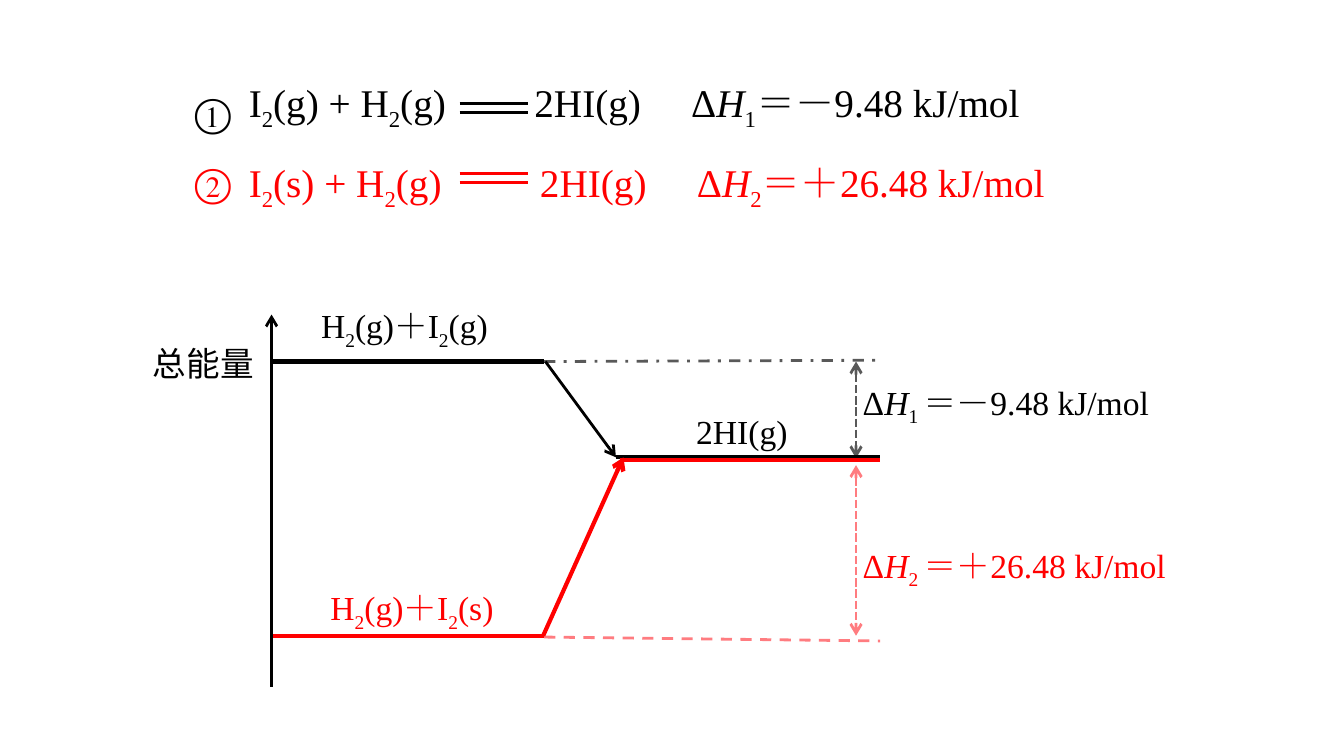
import pptx
import pptx.util
import pptx.dml.color
import pptx.enum.dml
import pptx.enum.shapes
import pptx.enum.text
import pptx.oxml.ns
from lxml import etree

Pt = pptx.util.Pt
RGB = pptx.dml.color.RGBColor
DASH = pptx.enum.dml.MSO_LINE
BLACK = RGB(0, 0, 0)
RED = RGB(0xFF, 0, 0)
GREY = RGB(0x59, 0x59, 0x59)
PINK = RGB(0xFF, 0x7C, 0x80)
SERIF = "Times New Roman"
SANS = "Noto Sans CJK SC"


def add_xml(parent, tag, **attributes):
    return etree.SubElement(parent, pptx.oxml.ns.qn(tag), attributes)


class EnergySlide:
    frame_format = {
        "word_wrap": True,
        "vertical_anchor": pptx.enum.text.MSO_ANCHOR.MIDDLE,
        "auto_size": pptx.enum.text.MSO_AUTO_SIZE.SHAPE_TO_FIT_TEXT,
    }

    def __init__(self, s):
        self.s = s

    def line(self, x1, y1, x2, y2, color, width=1.5, dash=None, head=False, tail=False):
        sp = self.s.shapes.add_connector(
            pptx.enum.shapes.MSO_CONNECTOR.STRAIGHT, Pt(x1), Pt(y1), Pt(x2), Pt(y2))
        sp.line.color.rgb = color
        sp.line.width = Pt(width)
        if dash:
            sp.line.dash_style = dash
        ln = sp.line._get_or_add_ln()
        for wanted, tag in ((head, "a:headEnd"), (tail, "a:tailEnd")):
            if wanted:
                add_xml(ln, tag, type="arrow")
        add_xml(sp._element.spPr, "a:effectLst")

    def runs(self, p, markup, color, size, font):
        for piece in markup.split("|"):
            r = p.add_run()
            r.text = piece.lstrip("_/")
            values = {"name": font, "size": Pt(size), "italic": piece.startswith("/")}
            for key, value in values.items():
                setattr(r.font, key, value)
            r.font.color.rgb = color
            add_xml(r.font._element, "a:ea", typeface=font)
            if piece.startswith("_"):
                r.font._element.set("baseline", "-25000")

    def text(self, x, y, w, h, rows, size=18, font=SERIF, spacing=None, inset=(5, 3), tabs=()):
        sp = self.s.shapes.add_textbox(Pt(x), Pt(y), Pt(w), Pt(h))
        tf = sp.text_frame
        side, edge = inset
        margins = {"margin_left": Pt(side), "margin_right": Pt(side),
                   "margin_top": Pt(edge), "margin_bottom": Pt(edge)}
        for key, value in {**self.frame_format, **margins}.items():
            setattr(tf, key, value)
        for i, (markup, color) in enumerate(rows):
            p = tf.paragraphs[0] if i == 0 else tf.add_paragraph()
            if spacing:
                p.line_spacing = spacing
            if tabs:
                stops = add_xml(p._p.get_or_add_pPr(), "a:tabLst")
                for stop in tabs[i]:
                    add_xml(stops, "a:tab", pos=str(Pt(stop)), algn="l")
            self.runs(p, markup, color, size, font)


def main():
    prs = pptx.Presentation()
    prs.slide_width, prs.slide_height = Pt(720), Pt(405)
    e = EnergySlide(prs.slides.add_slide(prs.slide_layouts[6]))

    axis, bend, gap_x, right = 145.5, 291.5, 458.6, 471.5
    gas, product, solid = 193.7, 245, 340.6

    e.text(97.2, 33.1, 35.3, 78.5, [("①", BLACK), ("②", RED)],
           size=21, spacing=1.5, inset=(7.2, 3.6))
    e.text(130.3, 31.7, 485.3, 77.8, [
        ("I|_2|(g) + H|_2|(g)\t2HI(g)\tΔ|/H|_1|＝－9.48 kJ/mol", BLACK),
        ("I|_2|(s) + H|_2|(g)\t2HI(g)\tΔ|/H|_2|＝＋26.48 kJ/mol", RED),
    ], size=21, spacing=1.5, inset=(3, 3), tabs=[(153, 237), (156, 240)])
    for top, color in ((55.4, BLACK), (92.9, RED)):
        for y in (top, top + 5):
            e.line(246.2, y, 283, y, color)

    e.line(axis, 368, axis, 168.5, BLACK, tail=True)
    e.text(77, 180.7, 69.8, 27.4, [("总能量", BLACK)], font=SANS)

    e.line(bend, gas, right, gas - 0.7, GREY, dash=DASH.DASH_DOT)
    e.line(bend, solid + 0.7, right, solid + 2.8, PINK, dash=DASH.DASH)
    e.line(gap_x, gas, gap_x, product + 0.5, GREY, dash=DASH.SQUARE_DOT, head=True, tail=True)
    e.line(gap_x, 249.2, gap_x, solid, PINK, dash=DASH.SQUARE_DOT, head=True, tail=True)

    e.line(axis, gas, bend, gas, BLACK, 2.25)
    e.line(330, product, right, product, BLACK, 2.25)
    e.line(bend + 0.7, gas, 330, product, BLACK, tail=True)
    e.line(axis + 0.7, solid, bend, solid, RED, 2.25)
    e.line(332, product + 1.4, right, product + 1.4, RED, 2.25)
    e.line(bend - 0.5, solid, 334, product, RED, 2.25, tail=True)

    for x, y, w, markup, color in (
        (167, 162, 121, "H|_2|(g)＋I|_2|(g)", BLACK),
        (172, 313.2, 121, "H|_2|(g)＋I|_2|(s)", RED),
        (368, 217.4, 76.3, "2HI(g)", BLACK),
        (457.2, 203, 218.9, "Δ|/H|_1 |＝－9.48 kJ/mol", BLACK),
        (457.2, 290.2, 218.9, "Δ|/H|_2 |＝＋26.48 kJ/mol", RED),
    ):
        e.text(x, y, w, 27.4, [(markup, color)])

    prs.save("out.pptx")


if __name__ == "__main__":
    main()
